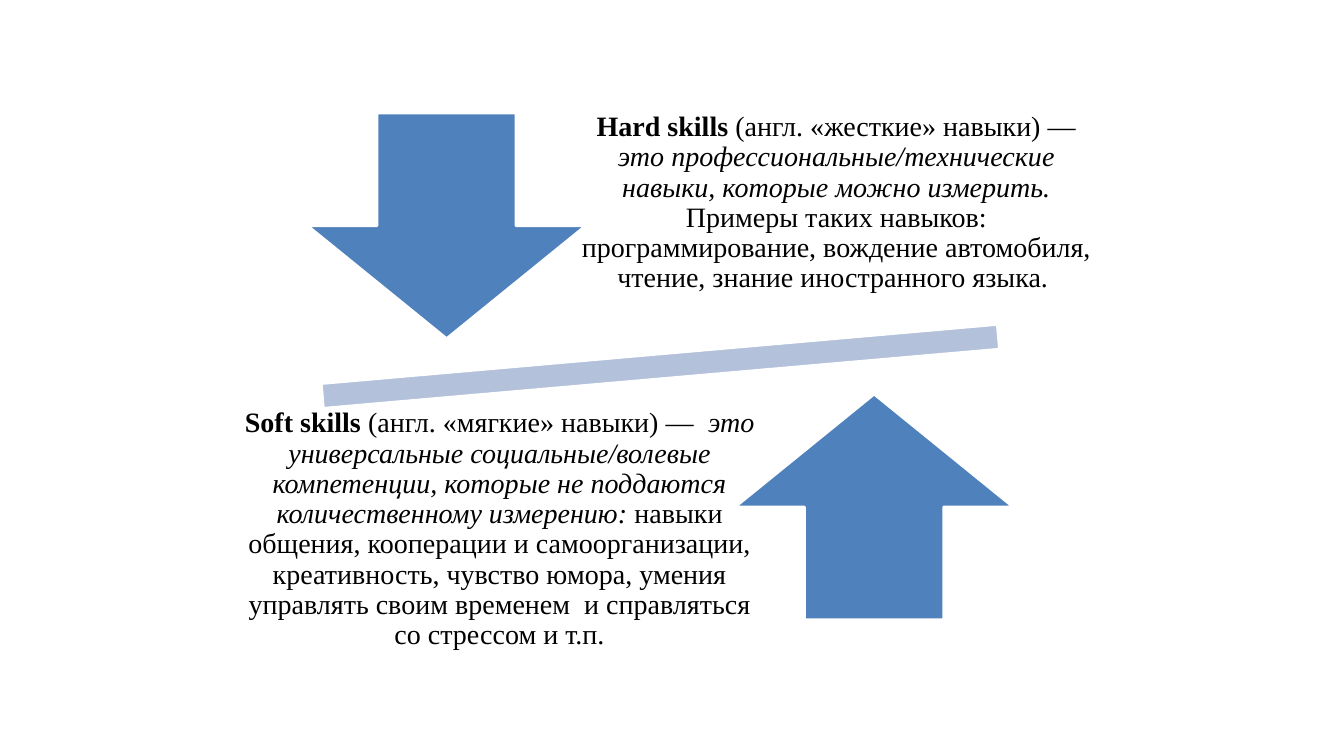
from dataclasses import dataclass

from pptx import Presentation, util as u
from pptx.dml.color import RGBColor
from pptx.enum import shapes, text


@dataclass(frozen=True)
class Theme:
    arrow: RGBColor = RGBColor.from_string("4F81BD")
    beam: RGBColor = RGBColor.from_string("B3C1DB")
    outline: RGBColor = RGBColor.from_string("FFFFFF")
    ink: RGBColor = RGBColor.from_string("000000")
    font: str = "Times New Roman"
    size: int = 20
    outline_width: int = 2


THEME = Theme()
ARROW_SIZE = (2.76, 2.24)
TEXT_WIDTH = 5.55
INSET = 0.16

HARD_SKILLS = (
    ("Hard skills", {"bold": True}),
    (" (англ. «жесткие» навыки) — ", {}),
    ("это профессиональные/технические навыки, которые можно измерить. ", {"italic": True}),
    ("Примеры таких навыков: программирование, вождение автомобиля, "
     "чтение, знание иностранного языка. ", {}),
)
SOFT_SKILLS = (
    ("Soft skills", {"bold": True}),
    (" (англ. «мягкие» навыки) —  ", {}),
    ("это универсальные социальные/волевые компетенции, которые не поддаются "
     "количественному измерению: ", {"italic": True}),
    ("навыки общения, кооперации и самоорганизации, креативность, чувство юмора, "
     "умения управлять своим временем  и справляться со стрессом и т.п.", {}),
)


def add_figure(slide, preset, left, top, width, height, color, rotation=0):
    figure = slide.shapes.add_shape(
        preset, u.Inches(left), u.Inches(top), u.Inches(width), u.Inches(height))
    figure.shadow.inherit = False
    figure.rotation = rotation
    figure.fill.solid()
    figure.fill.fore_color.rgb = color
    figure.line.color.rgb = THEME.outline
    figure.line.width = u.Pt(THEME.outline_width)


def add_run(paragraph, wording, bold=False, italic=False):
    run = paragraph.add_run()
    run.text = wording
    run.font.name = THEME.font
    run.font.size = u.Pt(THEME.size)
    run.font.color.rgb = THEME.ink
    run.font.bold = bold
    run.font.italic = italic


def add_definition(slide, left, top, height, parts):
    definition = slide.shapes.add_textbox(
        u.Inches(left), u.Inches(top), u.Inches(TEXT_WIDTH), u.Inches(height))
    frame = definition.text_frame
    frame.word_wrap = True
    frame.vertical_anchor = text.MSO_ANCHOR.MIDDLE
    frame.margin_left = frame.margin_right = u.Inches(INSET)
    frame.margin_top = frame.margin_bottom = u.Inches(INSET)
    paragraph = frame.paragraphs[0]
    paragraph.alignment = text.PP_ALIGN.CENTER
    paragraph.line_spacing = 0.9
    paragraph.space_after = u.Pt(0.35 * THEME.size)
    for wording, style in parts:
        add_run(paragraph, wording, **style)


def main():
    deck = Presentation()
    deck.slide_width = u.Inches(13.33)
    deck.slide_height = u.Inches(7.5)
    slide = deck.slides.add_slide(deck.slide_layouts[6])
    preset = shapes.MSO_SHAPE
    add_figure(slide, preset.MATH_MINUS, 1.97, 3.11, 9.16, 1.05, THEME.beam, rotation=355)
    add_figure(slide, preset.DOWN_ARROW, 3.05, 1.12, *ARROW_SIZE, THEME.arrow)
    add_definition(slide, 5.52, 0.84, 2.35, HARD_SKILLS)
    add_figure(slide, preset.UP_ARROW, 7.29, 3.91, *ARROW_SIZE, THEME.arrow)
    add_definition(slide, 2.18, 3.83, 2.85, SOFT_SKILLS)
    deck.save("out.pptx")


if __name__ == "__main__":
    main()
